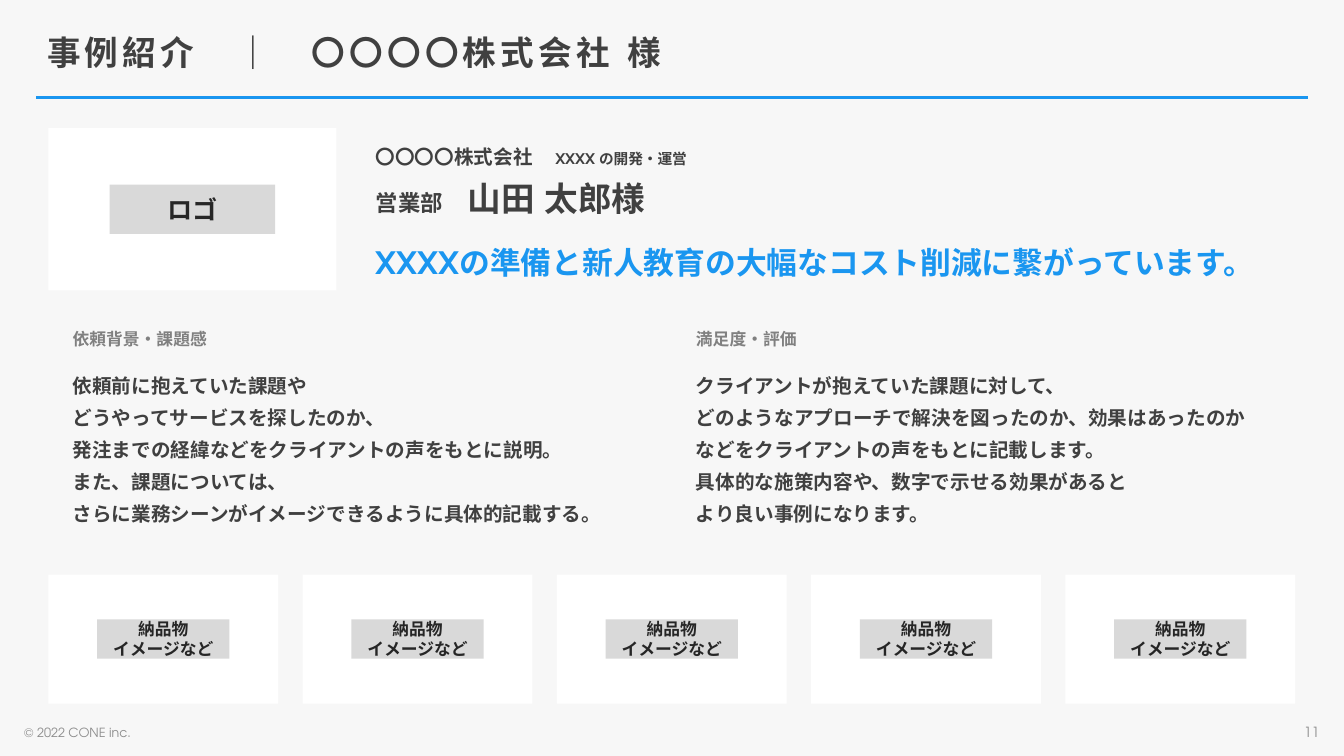
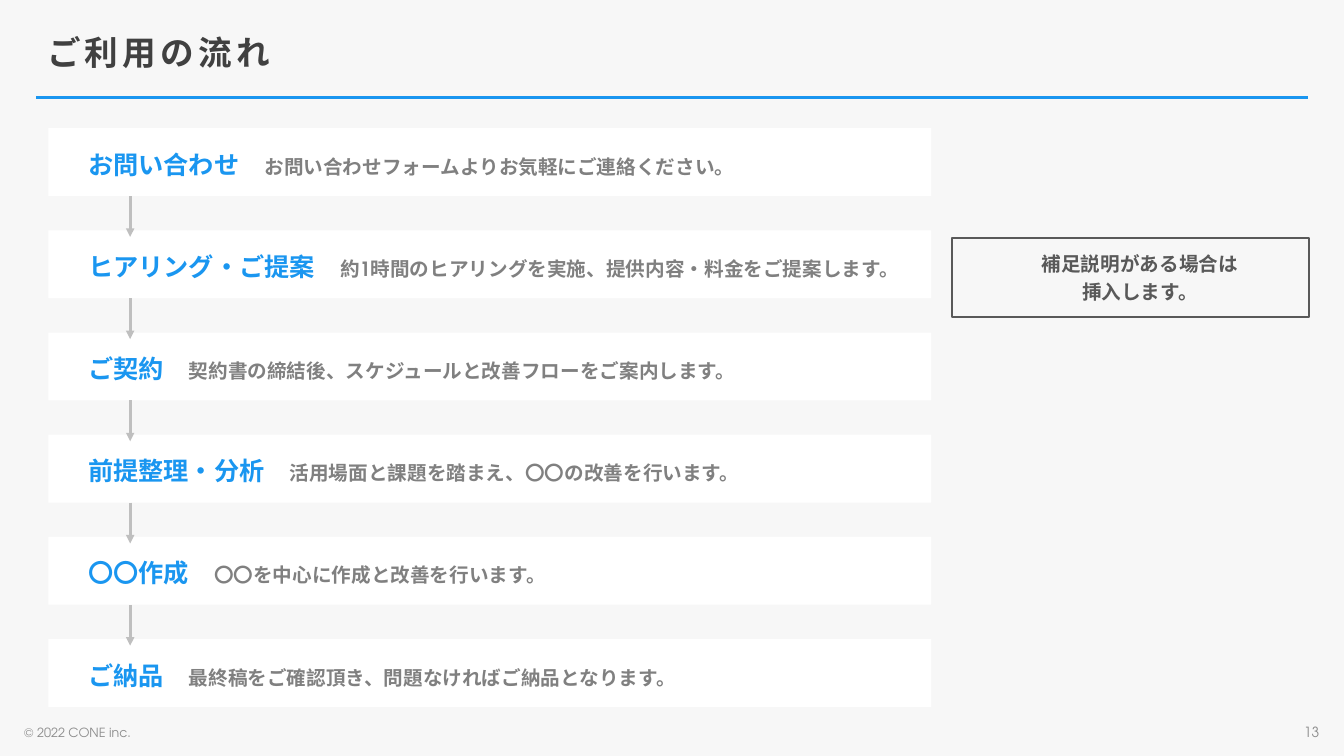
from dataclasses import dataclass
from math import cos, pi, sin
from typing import Any

from lxml import etree
from pptx import Presentation
from pptx import util as u
from pptx.dml import color
from pptx.enum import shapes, text
from pptx.oxml import ns

HUES = {
    "back": "F7F7F7", "blue": "1A96F0", "white": "FFFFFF", "tag": "D9D9D9",
    "black": "262626", "dark": "404040", "slate": "595959", "grey": "808080",
    "foot": "8C8C8C", "arrow": "BFBFBF",
}
FACE = "TeX Gyre Adventor"
SANS = "Noto Sans CJK JP"
LEFT, TOP, RIGHT = 1.22, 3.23, 32.64
MID = text.MSO_ANCHOR.MIDDLE
HIGH = text.MSO_ANCHOR.TOP
CENTER = text.PP_ALIGN.CENTER


@dataclass
class Box:
    x: float
    y: float
    w: float
    h: float

    def inner(self, w: float, h: float) -> "Box":
        return Box(self.x + (self.w - w) / 2, self.y + (self.h - h) / 2, w, h)

    def cm(self) -> list[u.Cm]:
        return [u.Cm(v) for v in (self.x, self.y, self.w, self.h)]


@dataclass
class Bit:
    words: str
    size: float
    hue: str = "dark"
    bold: bool = True
    face: str = FACE
    gap: int = 0


@dataclass
class Line:
    bits: list[Bit]
    before: float = 0
    align: Any = None


@dataclass
class Voice:
    head: str
    body: list[str]


@dataclass
class Step:
    name: str
    note: str


VOICES = [
    Voice("依頼背景・課題感", [
        "依頼前に抱えていた課題や",
        "どうやってサービスを探したのか、",
        "発注までの経緯などをクライアントの声をもとに説明。",
        "また、課題については、",
        "さらに業務シーンがイメージできるように具体的記載する。",
    ]),
    Voice("満足度・評価", [
        "クライアントが抱えていた課題に対して、",
        "どのようなアプローチで解決を図ったのか、効果はあったのか",
        "などをクライアントの声をもとに記載します。",
        "具体的な施策内容や、数字で示せる効果があると",
        "より良い事例になります。",
    ]),
]
STEPS = [
    Step("お問い合わせ", "お問い合わせフォームよりお気軽にご連絡ください。"),
    Step("ヒアリング・ご提案", "約1時間のヒアリングを実施、提供内容・料金をご提案します。"),
    Step("ご契約", "契約書の締結後、スケジュールと改善フローをご案内します。"),
    Step("前提整理・分析", "活用場面と課題を踏まえ、〇〇の改善を行います。"),
    Step("〇〇作成", "〇〇を中心に作成と改善を行います。"),
    Step("ご納品", "最終稿をご確認頂き、問題なければご納品となります。"),
]


def rgb(hue: str) -> color.RGBColor:
    return color.RGBColor.from_string(HUES[hue])


def add_run(para: Any, bit: Bit) -> None:
    run = para.add_run()
    run.text = bit.words
    font = run.font
    font.size, font.bold, font.name = u.Pt(bit.size), bit.bold, bit.face
    font.color.rgb = rgb(bit.hue)
    props = run._r.get_or_add_rPr()
    etree.SubElement(props, ns.qn("a:ea")).set("typeface", FACE)
    if bit.gap:
        props.set("spc", str(bit.gap))


def write(shape: Any, lines: list[Line], anchor: Any = MID,
          pad: tuple[float, ...] = (0.25, 0.13, 0.25, 0.13)) -> None:
    frame = shape.text_frame
    frame.word_wrap = True
    frame.auto_size = text.MSO_AUTO_SIZE.NONE
    frame.vertical_anchor = anchor
    (frame.margin_left, frame.margin_top,
     frame.margin_right, frame.margin_bottom) = [u.Cm(v) for v in pad]
    for i, line in enumerate(lines):
        para = frame.add_paragraph() if i else frame.paragraphs[0]
        para.alignment = line.align or text.PP_ALIGN.LEFT
        para.space_before = u.Pt(line.before)
        for bit in line.bits:
            add_run(para, bit)


def add_panel(slide: Any, box: Box, hue: str) -> Any:
    panel = slide.shapes.add_shape(shapes.MSO_SHAPE.RECTANGLE, *box.cm())
    panel.shadow.inherit = False
    panel.fill.solid()
    panel.fill.fore_color.rgb = rgb(hue)
    panel.line.fill.background()
    return panel


def add_label(slide: Any, box: Box, lines: list[Line], anchor: Any = MID,
              pad: tuple[float, ...] = (0.25, 0.13, 0.25, 0.13)) -> None:
    write(slide.shapes.add_textbox(*box.cm()), lines, anchor, pad)


def add_rule(slide: Any, x: float, y: float, right: float, low: float,
             hue: str, arrow: bool = False) -> None:
    rule = slide.shapes.add_connector(
        shapes.MSO_CONNECTOR.STRAIGHT, *[u.Cm(v) for v in (x, y, right, low)])
    rule.line.color.rgb = rgb(hue)
    rule.line.width = u.Pt(2)
    if arrow:
        etree.SubElement(rule.line._get_or_add_ln(), ns.qn("a:tailEnd")).set("type", "triangle")
    etree.SubElement(rule._element.spPr, ns.qn("a:effectLst"))


def add_card(slide: Any, box: Box, w: float, h: float, words: list[str], size: float) -> None:
    add_panel(slide, box, "white")
    tag = add_panel(slide, box.inner(w, h), "tag")
    write(tag, [Line([Bit(word, size, "black", face=SANS)], align=CENTER) for word in words])


def add_page(deck: Any, title: str, page: str) -> Any:
    slide = deck.slides.add_slide(deck.slide_layouts[5])
    add_rule(slide, 0.91, 2.46, 32.97, 2.46, "blue")
    head = slide.shapes.title
    head.left, head.top, head.width, head.height = Box(0.94, 0.53, 31.8, 1.6).cm()
    write(head, [Line([Bit(title, 24, gap=300)])], pad=(0.25, 0.2, 0.25, 0.13))
    head.text_frame.paragraphs[0].line_spacing = 0.9
    add_label(slide, Box(0.36, 18.11, 7.62, 0.69),
              [Line([Bit("© 2022 CONE inc.", 9, "foot", False)])])
    add_label(slide, Box(25.88, 18.11, 7.62, 0.69),
              [Line([Bit(page, 10, "foot", False)], align=text.PP_ALIGN.RIGHT)])
    return slide


def add_voice(slide: Any, box: Box, voice: Voice) -> None:
    lines = [Line([Bit(voice.head, 12, "grey")])]
    lines += [Line([Bit(words, 14)], 6 if i else 18) for i, words in enumerate(voice.body)]
    add_label(slide, box, lines, HIGH, (0.61, 0.41, 0.25, 0.1))


def add_bubble(slide: Any, box: Box, words: list[str]) -> None:
    curve, tip = 0.1, 0.46
    right, low = box.x + box.w, box.y + box.h
    hubs = [(box.x + curve, box.y + curve), (right - curve, box.y + curve),
            (right - curve, low - curve), (box.x + curve, low - curve)]
    dots = [(x + curve * cos(turn), y + curve * sin(turn))
            for i, (x, y) in enumerate(hubs)
            for turn in (pi + (i + k / 6) * pi / 2 for k in range(7))]
    dots += [(box.x, box.y + 1.55), (box.x - tip, box.y + 1.14), (box.x, box.y + 1.07)]
    pen = slide.shapes.build_freeform(*dots[0], scale=float(u.Cm(1)))
    pen.add_line_segments(dots[1:], close=True)
    bubble = pen.convert_to_shape()
    bubble.shadow.inherit = False
    bubble.fill.background()
    bubble.line.color.rgb = rgb("slate")
    bubble.line.width = u.Pt(1.5)
    lines = [Line([Bit(word, 14, "slate")], 3 if i else 0, CENTER)
             for i, word in enumerate(words)]
    write(bubble, lines, pad=(0.25 + tip, 0.2, 0.25, 0.2))


def add_case(deck: Any) -> None:
    slide = add_page(deck, "事例紹介　｜　〇〇〇〇株式会社 様", "11")
    add_card(slide, Box(LEFT, TOP, 7.26, 4.09), 4.17, 1.24, ["ロゴ"], 18)
    add_label(slide, Box(8.86, TOP, 23.78, 4.09), [
        Line([Bit("〇〇〇〇株式会社", 14), Bit("　", 16), Bit("XXXX の開発・運営", 10.5)]),
        Line([Bit("営業部", 16), Bit("　", 18), Bit("山田 太郎様", 24)], 6),
        Line([Bit("XXXXの準備と新人教育の大幅なコスト削減に繋がっています。", 22, "blue")], 18),
    ], pad=(0.61, 0.2, 0.25, 0.1))
    half = (RIGHT - LEFT) / 2
    for i, voice in enumerate(VOICES):
        add_voice(slide, Box(LEFT + i * half, 7.87, half, 6.2), voice)
    count, wide = 5, 5.79
    pitch = (RIGHT - LEFT - wide) / (count - 1)
    for i in range(count):
        add_card(slide, Box(LEFT + i * pitch, 14.48, wide, 3.25), 3.33, 0.99,
                 ["納品物", "イメージなど"], 12)


def add_flow(deck: Any) -> None:
    slide = add_page(deck, "ご利用の流れ", "13")
    tall, pitch = 1.71, 2.575
    for i, step in enumerate(STEPS):
        panel = add_panel(slide, Box(LEFT, TOP + i * pitch, 22.25, tall), "white")
        write(panel, [Line([Bit(step.name + "　", 18, "blue"), Bit(step.note, 14, "grey")])],
              pad=(1, 0.2, 0.25, 0.1))
    for i in range(len(STEPS) - 1):
        y = TOP + i * pitch + tall
        add_rule(slide, 3.28, y, 3.28, y + 1.03, "arrow", True)
    add_bubble(slide, Box(24.46, 5.8, 8.18, 2.11), ["補足説明がある場合は", "挿入します。"])


def main() -> None:
    deck = Presentation()
    deck.slide_width, deck.slide_height = u.Cm(33.87), u.Cm(19.05)
    back = deck.slide_master.background.fill
    back.solid()
    back.fore_color.rgb = rgb("back")
    add_case(deck)
    add_flow(deck)
    deck.save("out.pptx")


if __name__ == "__main__":
    main()
